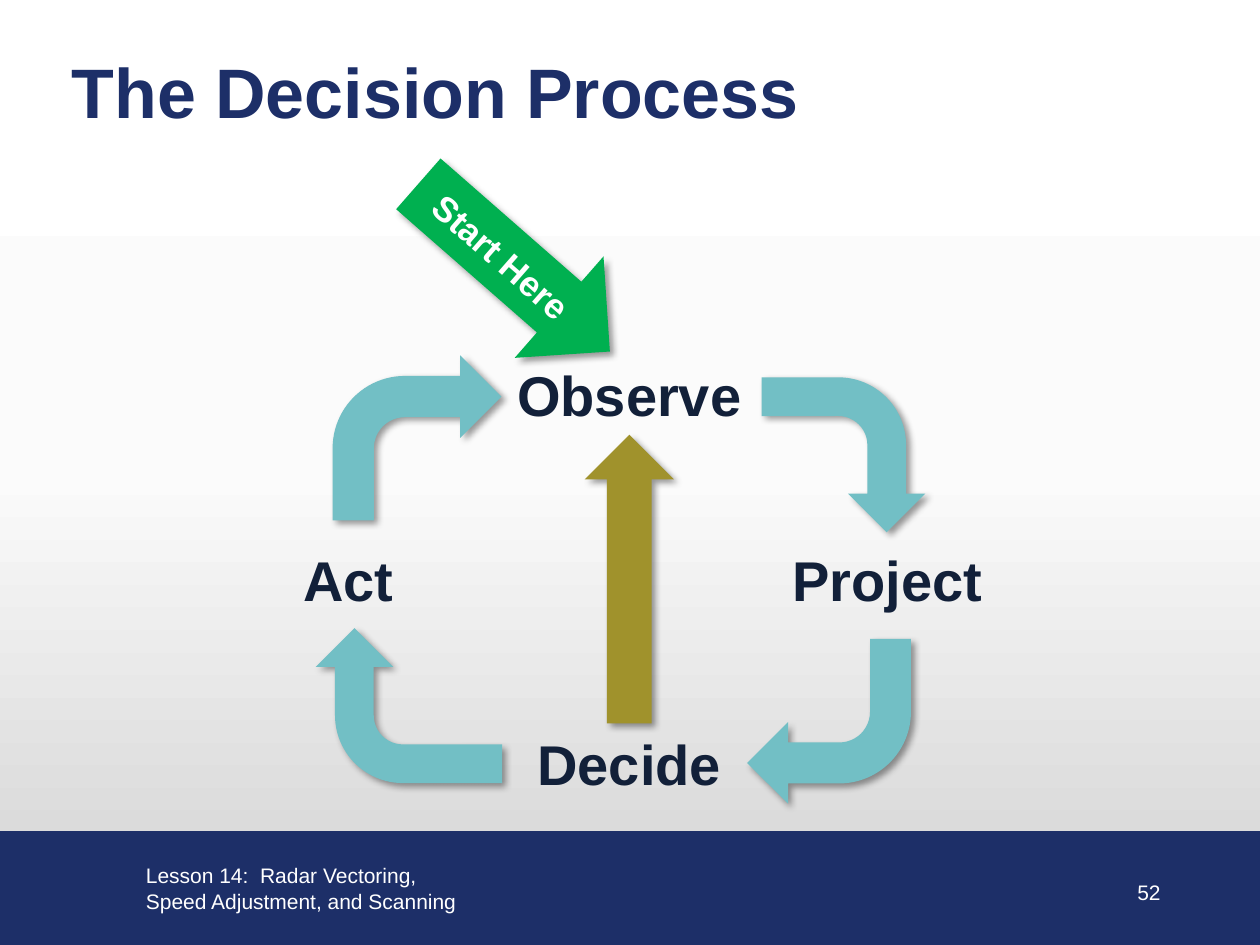
from lxml.etree import SubElement
from pptx import Presentation
from pptx.dml.color import RGBColor
from pptx.enum.shapes import MSO_SHAPE as Preset
from pptx.enum.text import MSO_ANCHOR as Anchor, MSO_AUTO_SIZE as AutoSize, PP_ALIGN as Align
from pptx.oxml.ns import qn
from pptx.util import Inches, Pt

COLORS = {
    "navy": "1D2F68", "ink": "122039", "white": "FFFFFF",
    "teal": "72BFC5", "green": "00B050", "olive": "A0922C", "shadow": "000000",
}
BACKGROUND_STOPS = [(0, "FFFFFF"), (50, "FBFBFB"), (100, "D0D0D0")]


def color(name):
    return RGBColor.from_string(COLORS[name])


class SlideBuilder:
    font = "Arial"

    def __init__(self, page):
        self.page = page

    def background(self, stops):
        fill = self.page.background.fill
        fill.gradient()
        fill.gradient_angle = 270
        stop_list = self.page.element.find(".//" + qn("a:gsLst"))
        for old_stop in list(stop_list):
            stop_list.remove(old_stop)
        for percent, value in stops:
            stop = SubElement(stop_list, qn("a:gs"), pos=str(percent * 1000))
            SubElement(stop, qn("a:srgbClr"), val=value)

    def set_text(self, shape, text, size, ink, bold=False, align=Align.LEFT, anchor=Anchor.TOP):
        frame = shape.text_frame
        frame.text = text
        frame.word_wrap = True
        frame.auto_size = AutoSize.NONE
        frame.vertical_anchor = anchor
        para = frame.paragraphs[0]
        para.alignment = align
        font = para.runs[0].font
        font.name, font.size, font.bold = self.font, Pt(size), bold
        font.color.rgb = color(ink)

    def title(self, text, *place):
        shape = self.page.shapes.title
        shape.left, shape.top, shape.width, shape.height = map(Inches, place)
        self.set_text(shape, text, 40, "navy", bold=True, anchor=Anchor.MIDDLE)

    def label(self, text, place, size=12, ink="white", **style):
        box = self.page.shapes.add_textbox(*map(Inches, place))
        self.set_text(box, text, size, ink, **style)

    def shape(self, preset, place, fill):
        shape = self.page.shapes.add_shape(preset, *map(Inches, place))
        shape.shadow.inherit = False
        shape.fill.solid()
        shape.fill.fore_color.rgb = color(fill)
        shape.line.fill.background()
        return shape

    def band(self, *place):
        band = self.shape(Preset.RECTANGLE, place, "navy")
        band.line.color.rgb = color("navy")
        band.line.width = Pt(0.75)

    def arrow(self, preset, place, fill, rotation=0):
        """Add a block arrow with a soft shadow to its lower right."""
        arrow = self.shape(preset, place, fill)
        arrow.rotation = rotation
        effects = arrow.element.spPr.find(qn("a:effectLst"))
        shadow = SubElement(
            effects, qn("a:outerShdw"), blurRad=str(Pt(4)), dist=str(Pt(3)),
            dir=str(45 * 60000), algn="tl", rotWithShape="0")
        tint = SubElement(shadow, qn("a:srgbClr"), val=COLORS["shadow"])
        SubElement(tint, qn("a:alpha"), val="40000")
        return arrow


def main():
    deck = Presentation()
    deck.slide_width, deck.slide_height = Inches(10), Inches(7.5)
    builder = SlideBuilder(deck.slides.add_slide(deck.slide_layouts[5]))

    builder.background(BACKGROUND_STOPS)
    builder.band(-0.02, 6.6, 10.02, 0.9)
    builder.label("Lesson 14:  Radar Vectoring, Speed Adjustment, and Scanning",
                  (1.06, 6.8, 2.79, 0.5))
    builder.title("The Decision Process", 0.47, 0.38, 9.27, 0.67)
    builder.label("52", (8.69, 6.93, 0.62, 0.3), align=Align.RIGHT, anchor=Anchor.MIDDLE)

    steps = [
        ("Observe", 3.84, 2.81, 2.31),
        ("Project", 6.03, 4.28, 2.03),
        ("Decide", 3.98, 5.74, 2.03),
        ("Act", 2.15, 4.28, 1.23),
    ]
    for step, left, top, width in steps:
        builder.label(step, (left, top, width, 0.64), size=32, ink="ink",
                      bold=True, align=Align.CENTER)

    cycle_arrows = [
        (6.08, 2.96, 1.23, 1.3),
        (5.93, 5.07, 1.3, 1.31),
        (2.63, 4.86, 1.23, 1.48),
        (2.64, 2.82, 1.34, 1.31),
    ]
    for quarter, place in enumerate(cycle_arrows, start=1):
        builder.arrow(Preset.BENT_ARROW, place, "teal", rotation=quarter * 90 % 360)

    start = builder.arrow(Preset.RIGHT_ARROW, (3.07, 1.59, 2.02, 1.07), "green", rotation=41.2)
    builder.set_text(start, "Start Here", 20, "white", bold=True,
                     align=Align.CENTER, anchor=Anchor.MIDDLE)
    builder.arrow(Preset.UP_ARROW, (4.64, 3.45, 0.71, 2.29), "olive")

    deck.save("out.pptx")


if __name__ == "__main__":
    main()
